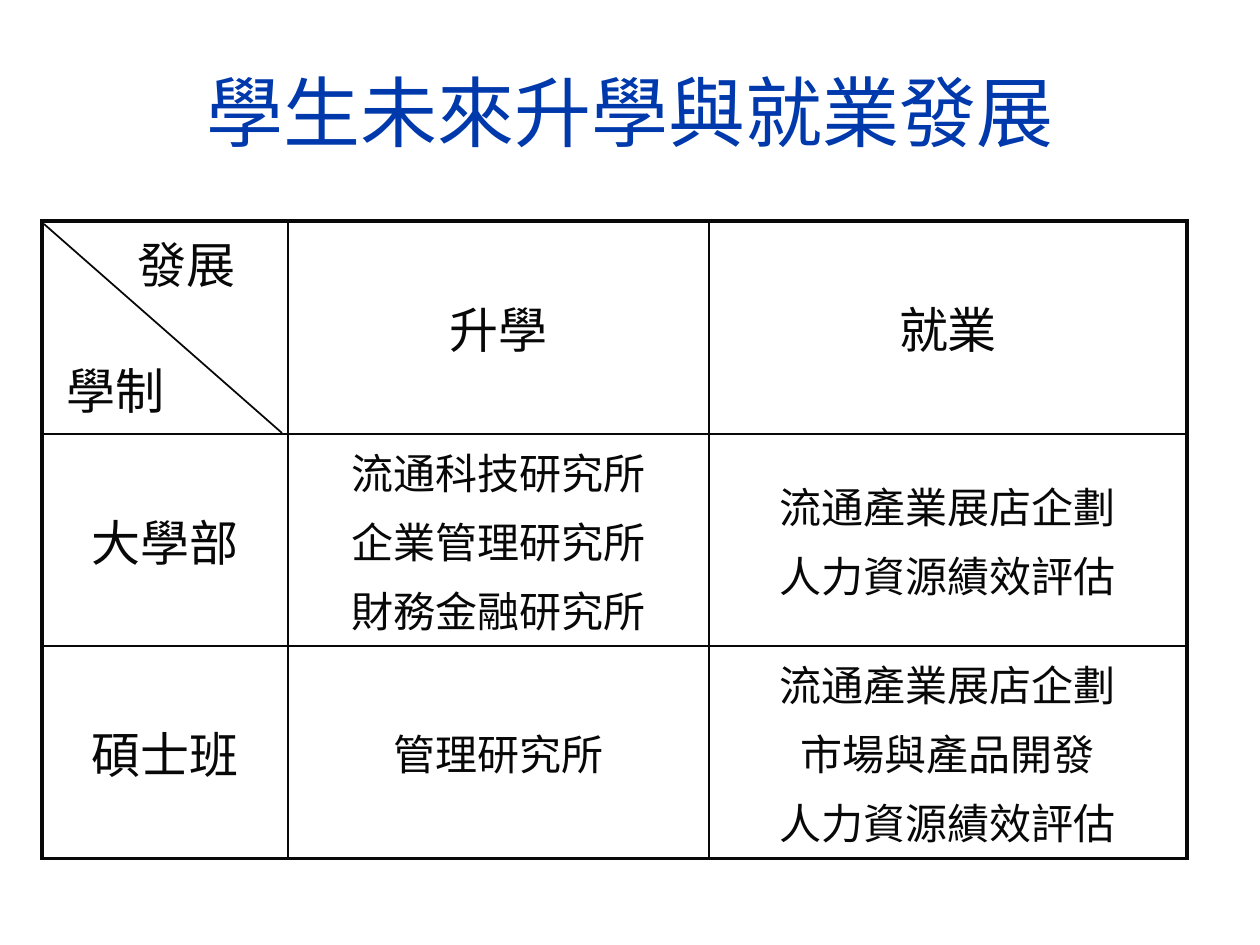
"""Build a slide with a table of study and career paths for students."""
from lxml.etree import SubElement
from pptx import Presentation
from pptx.dml.color import RGBColor
from pptx.enum.shapes import MSO_CONNECTOR as Connector
from pptx.enum.text import MSO_ANCHOR as Anchor, MSO_AUTO_SIZE as AutoSize, PP_ALIGN as Align
from pptx.oxml.ns import qn
from pptx.util import Emu, Pt

BLUE = RGBColor(0x00, 0x39, 0xAC)
BLACK = RGBColor(0x08, 0x08, 0x08)
LATIN = "Arial"
CJK = "Noto Sans CJK SC"
THICK, THIN = 2.25, 1
COLUMNS = (246, 421, 478)
ROWS = (213, 207, 207)
CELLS = (
    (["發展"], ["升學"], ["就業"]),
    (["大學部"], ["流通科技研究所", "企業管理研究所", "財務金融研究所"],
     ["流通產業展店企劃", "人力資源績效評估"]),
    (["碩士班"], ["管理研究所"],
     ["流通產業展店企劃", "市場與產品開發", "人力資源績效評估"]),
)


def px(length):
    """Turn pixels at 126 to the inch into EMU."""
    return Emu(round(length * 914400 / 126))


def add_span(para, text, size, color, font):
    """Add one formatted run to a paragraph."""
    span = para.add_run()
    span.text = text
    span.font.size = Pt(size)
    span.font.name = font
    span.font.color.rgb = color
    SubElement(span.font._element, qn("a:ea"), typeface=CJK)


def add_title(page, text):
    """Place the slide title in its placeholder."""
    title = page.shapes.title
    title.left, title.top, title.width, title.height = map(px, (42, 32, 1177, 158))
    title.text_frame.vertical_anchor = Anchor.MIDDLE
    para = title.text_frame.paragraphs[0]
    para.alignment = Align.CENTER
    add_span(para, text, 44, BLUE, LATIN)


def set_border(cell, side, width):
    """Draw one side of a cell's border."""
    properties = cell._tc.get_or_add_tcPr()
    line = SubElement(properties, qn(f"a:{side}"), w=str(Pt(width)))
    fill = SubElement(line, qn("a:solidFill"))
    SubElement(fill, qn("a:srgbClr"), val=str(BLACK))


def fill_cell(cell, lines, size):
    """Write centred lines into a cell."""
    cell.vertical_anchor = Anchor.MIDDLE
    frame = cell.text_frame
    for index, text in enumerate(lines):
        para = frame.add_paragraph() if index else frame.paragraphs[0]
        para.alignment = Align.CENTER
        if index:
            para.space_before = Pt(size * 0.2)
        add_span(para, text, size, BLACK, CJK)


def add_paths_table(page):
    """Add the table with a heavy frame and thin inner rules."""
    table = page.shapes.add_table(len(ROWS), len(COLUMNS), px(42), px(221),
                                  px(sum(COLUMNS)), px(sum(ROWS))).table
    table.first_row = table.horz_banding = False
    for column, width in zip(table.columns, COLUMNS):
        column.width = px(width)
    for row, height in zip(table.rows, ROWS):
        row.height = px(height)
    last_row, last_column = len(ROWS) - 1, len(COLUMNS) - 1
    for r, row_cells in enumerate(CELLS):
        for c, lines in enumerate(row_cells):
            cell = table.cell(r, c)
            fill_cell(cell, lines, 24 if r and c else 28)
            edges = {"lnL": c == 0, "lnR": c == last_column,
                     "lnT": r == 0, "lnB": r == last_row}
            for side, outer in edges.items():
                set_border(cell, side, THICK if outer else THIN)
            cell.fill.background()
    corner = table.cell(0, 0)
    corner.vertical_anchor = Anchor.TOP
    corner.margin_left = px(55)


def add_diagonal(page):
    """Split the corner cell with a slanting line."""
    line = page.shapes.add_connector(Connector.STRAIGHT, px(44), px(224), px(282), px(433))
    line.line.color.rgb = BLACK
    line.line.width = Pt(THIN)
    SubElement(line._element.spPr, qn("a:effectLst"))


def add_label(page, text):
    """Add the row label in the lower half of the corner cell."""
    box = page.shapes.add_textbox(px(54), px(354), px(149), px(72))
    box.text_frame.word_wrap = True
    box.text_frame.auto_size = AutoSize.SHAPE_TO_FIT_TEXT
    add_span(box.text_frame.paragraphs[0], text, 28, BLACK, LATIN)


def main():
    """Build and save the deck."""
    deck = Presentation()
    deck.slide_width, deck.slide_height = px(1260), px(945)
    page = deck.slides.add_slide(deck.slide_layouts[5])
    add_title(page, "學生未來升學與就業發展")
    add_paths_table(page)
    add_diagonal(page)
    add_label(page, "學制")
    deck.save("out.pptx")


if __name__ == "__main__":
    main()
